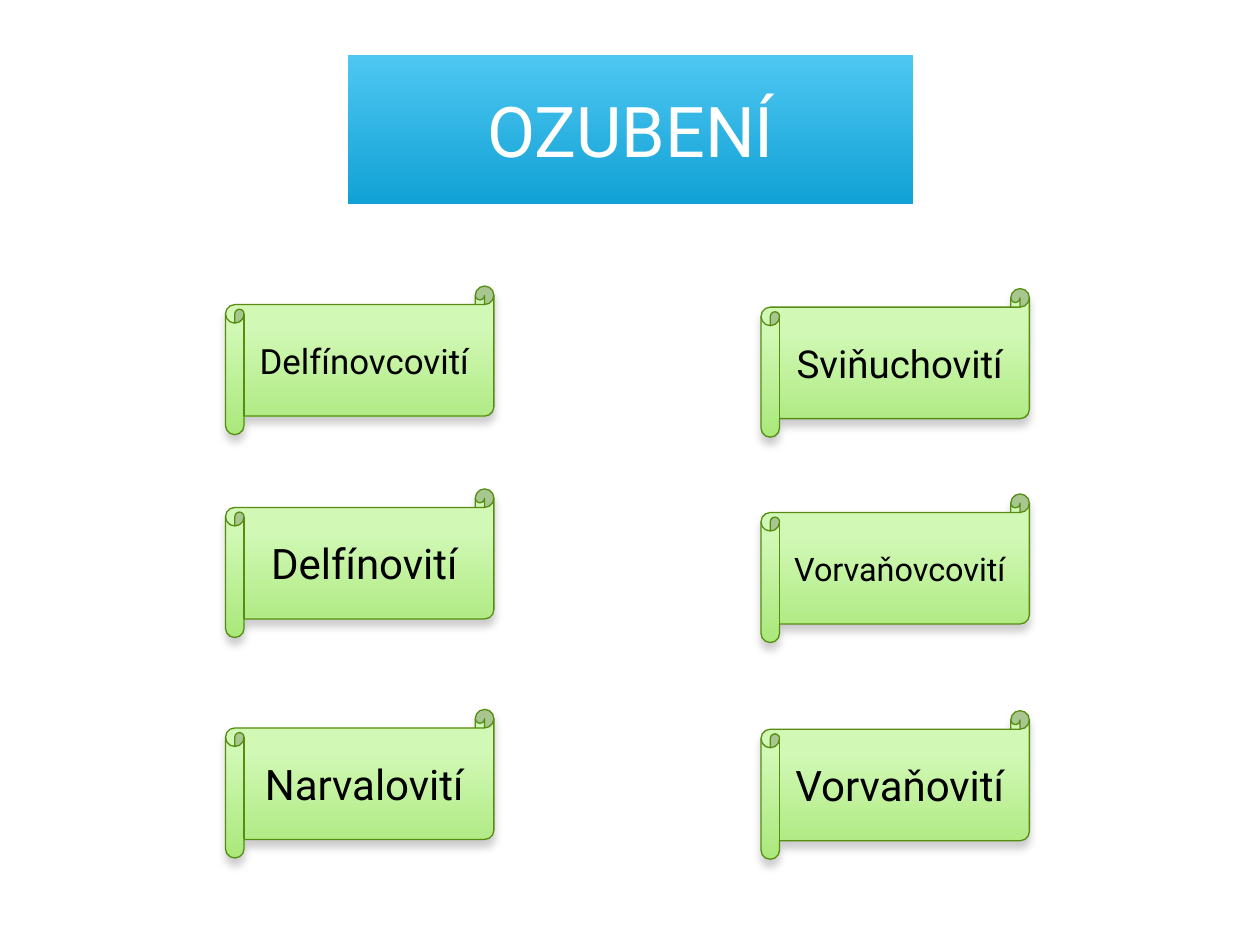
from dataclasses import dataclass

from lxml.etree import SubElement
from pptx import Presentation
from pptx.dml.color import RGBColor as RGB
from pptx.enum.shapes import MSO_SHAPE as Shape
from pptx.enum.text import MSO_ANCHOR as Anchor, MSO_AUTO_SIZE as AutoSize, PP_ALIGN as Align
from pptx.oxml.ns import qn
from pptx.util import Inches, Pt


@dataclass(frozen=True)
class Theme:
    font: str = "Roboto"
    title_size: float = 40
    title_text: str = "FFFFFF"
    title_fill: tuple = ((0, "4EC7F2"), (1, "11A1D4"))
    family_text: str = "000000"
    family_fill: tuple = ((0.28, "D1F8B5"), (1, "AAE87B"))
    family_line: str = "568D11"
    shadow: str = "000000"


@dataclass(frozen=True)
class Family:
    name: str
    top: float
    size: float = 24


THEME = Theme()
SCROLL_W, SCROLL_H = 2.13, 1.18
COLUMNS = {
    1.79: [
        Family("Delfínovcovití", 2.27, 19.9),
        Family("Delfínovití", 3.88),
        Family("Narvalovití", 5.63),
    ],
    6.04: [
        Family("Sviňuchovití", 2.29, 22),
        Family("Vorvaňovcovití", 3.92, 18.5),
        Family("Vorvaňovití", 5.64),
    ],
}


def write_text(sp, text: str, *, size: float, color: str) -> None:
    tf = sp.text_frame
    tf.word_wrap = True
    tf.auto_size = AutoSize.NONE
    tf.vertical_anchor = Anchor.MIDDLE
    p = tf.paragraphs[0]
    p.alignment = Align.CENTER
    r = p.add_run()
    r.text = text
    r.font.name = THEME.font
    r.font.size = Pt(size)
    r.font.color.rgb = RGB.from_string(color)


def fill_downward(sp, stops: tuple) -> None:
    """Fill with a gradient that runs from top to bottom."""
    sp.fill.gradient()
    sp.fill.gradient_angle = 270
    for stop, (position, color) in zip(sp.fill.gradient_stops, stops):
        stop.position = position
        stop.color.rgb = RGB.from_string(color)


def add_soft_shadow(sp) -> None:
    sp.shadow.inherit = False
    effects = sp._element.spPr.find(qn("a:effectLst"))
    shadow = SubElement(effects, qn("a:outerShdw"), blurRad=str(Pt(5)), dist=str(Pt(4)),
                        dir="5400000", rotWithShape="0")
    color = SubElement(shadow, qn("a:srgbClr"), val=THEME.shadow)
    SubElement(color, qn("a:alpha"), val="20000")


def add_title(s, text: str) -> None:
    sp = s.shapes.title
    sp.left, sp.top = Inches(2.76), Inches(0.44)
    sp.width, sp.height = Inches(4.49), Inches(1.18)
    geometry = SubElement(sp._element.spPr, qn("a:prstGeom"), prst="roundRect")
    SubElement(geometry, qn("a:avLst"))
    fill_downward(sp, THEME.title_fill)
    write_text(sp, text, size=THEME.title_size, color=THEME.title_text)


def add_scroll(s, family: Family, left: float) -> None:
    sp = s.shapes.add_shape(Shape.HORIZONTAL_SCROLL, Inches(left), Inches(family.top),
                            Inches(SCROLL_W), Inches(SCROLL_H))
    fill_downward(sp, THEME.family_fill)
    sp.line.color.rgb = RGB.from_string(THEME.family_line)
    sp.line.width = Pt(0.75)
    add_soft_shadow(sp)
    write_text(sp, family.name, size=family.size, color=THEME.family_text)


def main() -> None:
    prs = Presentation()
    prs.slide_width, prs.slide_height = Inches(10), Inches(7.5)
    s = prs.slides.add_slide(prs.slide_layouts.get_by_name("Title Only"))
    add_title(s, "OZUBENÍ")
    for left, families in COLUMNS.items():
        for family in families:
            add_scroll(s, family, left)
    prs.save("out.pptx")


if __name__ == "__main__":
    main()
